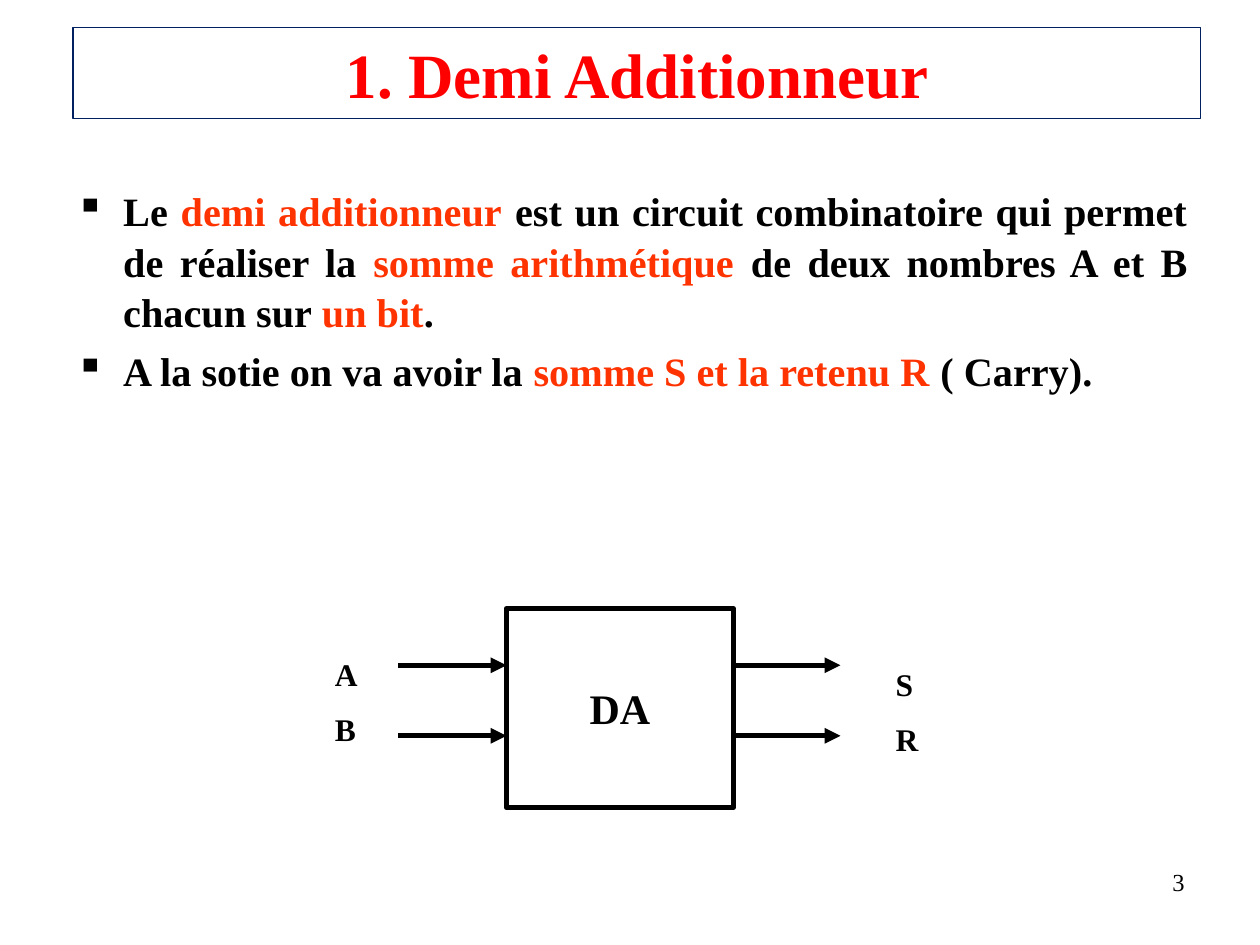
from dataclasses import dataclass

from lxml.etree import SubElement
from pptx import Presentation
from pptx.dml.color import RGBColor
from pptx.enum.shapes import MSO_CONNECTOR, MSO_SHAPE
from pptx.enum.text import MSO_ANCHOR, MSO_AUTO_SIZE, PP_ALIGN
from pptx.oxml.ns import qn
from pptx.util import Inches, Pt


@dataclass(frozen=True)
class Theme:
    """Font, colours and type sizes of the deck."""
    font: str = "Times New Roman"
    ink: str = "000000"
    accent: str = "FF3300"
    title_ink: str = "FF0000"
    title_border: str = "002060"
    title_size: int = 36
    body_size: int = 23
    block_size: int = 24
    signal_size: int = 18
    number_size: int = 14


class SlideBuilder:
    """Draws styled elements on the current slide."""

    def __init__(self, slide, theme):
        """Keep the slide, the theme and a group for the circuit."""
        self.slide = slide
        self.theme = theme
        self.circuit = slide.shapes.add_group_shape().shapes

    def style(self, para, size, color=None, bold=True):
        """Format every run of a paragraph."""
        for span in para.runs:
            span.font.name = self.theme.font
            span.font.size = Pt(size)
            span.font.bold = bold
            span.font.color.rgb = RGBColor.from_string(color or self.theme.ink)

    def title(self, text, left, top, width, height):
        """Fill, frame and place the title placeholder."""
        title = self.slide.shapes.title
        title.left, title.top = Inches(left), Inches(top)
        title.width, title.height = Inches(width), Inches(height)
        title.line.color.rgb = RGBColor.from_string(self.theme.title_border)
        title.line.width = Pt(0.75)
        frame = title.text_frame
        frame.text = text
        frame.auto_size = MSO_AUTO_SIZE.NONE
        frame.vertical_anchor = MSO_ANCHOR.MIDDLE
        frame.paragraphs[0].alignment = PP_ALIGN.CENTER
        self.style(frame.paragraphs[0], self.theme.title_size, self.theme.title_ink)

    def text_box(self, shapes, left, top, width, height):
        """Add an empty wrapping text box and return its frame."""
        box = shapes.add_textbox(Inches(left), Inches(top), Inches(width), Inches(height))
        box.text_frame.word_wrap = True
        return box.text_frame

    def bullets(self, items, left, top, width, height):
        """Add justified bullets whose odd-numbered spans are highlighted."""
        frame = self.text_box(self.slide.shapes, left, top, width, height)
        for index, spans in enumerate(items):
            para = frame.add_paragraph() if index else frame.paragraphs[0]
            for text in spans:
                para.add_run().text = text
            self.style(para, self.theme.body_size)
            for span in para.runs[1::2]:
                span.font.color.rgb = RGBColor.from_string(self.theme.accent)
            para.alignment = PP_ALIGN.JUSTIFY
            para.line_spacing = 1.05
            para.space_before = Pt(4.6)
            properties = para._p.get_or_add_pPr()
            properties.set("marL", str(Inches(0.38)))
            properties.set("indent", str(-Inches(0.38)))
            SubElement(properties, qn("a:buChar")).set("char", "▪")

    def block(self, text, left, top, width, height):
        """Add the outlined circuit block with its name."""
        block = self.circuit.add_shape(
            MSO_SHAPE.RECTANGLE, Inches(left), Inches(top), Inches(width), Inches(height))
        block.shadow.inherit = False
        block.fill.background()
        block.line.color.rgb = RGBColor.from_string(self.theme.ink)
        block.line.width = Pt(3)
        frame = block.text_frame
        frame.text = text
        frame.word_wrap = False
        frame.vertical_anchor = MSO_ANCHOR.MIDDLE
        frame.paragraphs[0].alignment = PP_ALIGN.CENTER
        self.style(frame.paragraphs[0], self.theme.block_size)

    def arrow(self, start, end, height):
        """Add a horizontal arrow pointing to its end."""
        arrow = self.circuit.add_connector(
            MSO_CONNECTOR.STRAIGHT, Inches(start), Inches(height), Inches(end), Inches(height))
        arrow.line.color.rgb = RGBColor.from_string(self.theme.ink)
        arrow.line.width = Pt(3)
        SubElement(arrow.line._get_or_add_ln(), qn("a:tailEnd")).set("type", "triangle")
        SubElement(arrow._element.spPr, qn("a:effectLst"))

    def signals(self, names, left, top, width, height):
        """Add a column of signal names."""
        frame = self.text_box(self.circuit, left, top, width, height)
        frame.text = "\n".join(names)
        for para in frame.paragraphs:
            para.space_before = Pt(9.5)
            self.style(para, self.theme.signal_size)

    def page_number(self, number, left, top, width, height):
        """Add the page number at the right."""
        frame = self.text_box(self.slide.shapes, left, top, width, height)
        frame.text = number
        frame.paragraphs[0].alignment = PP_ALIGN.RIGHT
        self.style(frame.paragraphs[0], self.theme.number_size, bold=False)


def main():
    """Build and save the half adder slide."""
    deck = Presentation()
    deck.slide_width, deck.slide_height = Inches(10), Inches(7.5)
    page = SlideBuilder(deck.slides.add_slide(deck.slide_layouts[5]), Theme())
    page.title("1. Demi Additionneur", 0.58, 0.22, 8.95, 0.72)
    page.bullets([
        ["Le ", "demi additionneur", " est un circuit combinatoire qui permet de réaliser la ",
         "somme arithmétique", " de deux nombres A et B chacun sur ", "un bit", "."],
        ["A la sotie on va avoir la ", "somme S et la retenu R ", "( Carry)."],
    ], 0.5, 1.41, 9.03, 2.73)
    page.block("DA", 4.02, 4.83, 1.8, 1.58)
    for start, end in ((3.16, 4.02), (5.82, 6.67)):
        for height in (5.28, 5.84):
            page.arrow(start, end, height)
    page.signals("AB", 2.56, 5.15, 0.6, 0.85)
    page.signals("SR", 7.01, 5.23, 0.43, 0.85)
    page.page_number("3", 7.17, 6.83, 2.33, 0.52)
    deck.save("out.pptx")


if __name__ == "__main__":
    main()
